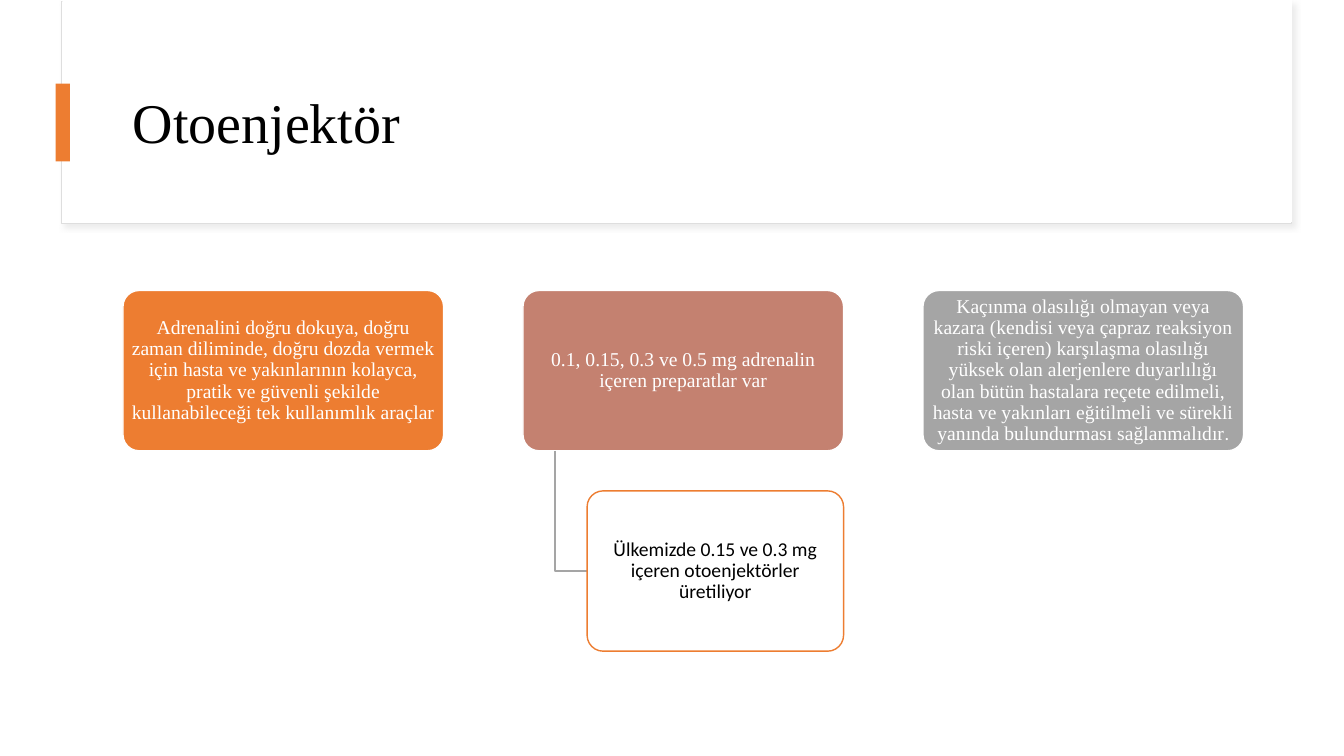
from dataclasses import dataclass

import pptx
import pptx.dml.color
import pptx.enum.shapes
import pptx.enum.text
import pptx.oxml
import pptx.oxml.ns
import pptx.util

Cm, Pt = pptx.util.Cm, pptx.util.Pt
RGB = pptx.dml.color.RGBColor.from_string
SHAPE = pptx.enum.shapes.MSO_SHAPE
ALIGN = pptx.enum.text.PP_ALIGN

COLORS = {
    "white": "FFFFFF", "black": "000000", "orange": "ED7D31", "rose": "C48170",
    "gray": "A5A5A5", "frame": "DEDEDE", "shadow": "D9D9D9",
}
SERIF, SANS = "Times New Roman", "Calibri"

# Diagram grid, in centimetres
LEFT, TOP, PITCH = 3.1, 7.32, 10.08
BOX_W, BOX_H = 8.08, 4.04
CHILD_INDENT = BOX_W / 5
CHILD_TOP = TOP + BOX_H * 1.25


@dataclass
class Run:
    text: str
    font: str = SERIF
    size: float = 14
    color: str = "white"


@dataclass
class Box:
    x: float
    y: float
    w: float
    h: float
    fill: str
    line: str | None = None
    line_pt: float = 1
    runs: tuple[Run, ...] = ()


PANELS = [
    Box(1.55, 0.03, 31.01, 5.61, "white", "frame", 0.75),
    Box(1.57, 0, 30.99, 5.59, "white"),
    Box(1.4, 2.11, 0.36, 1.96, "orange"),
]

TOPICS = [
    ("orange", (Run(
        "Adrenalini doğru dokuya, doğru zaman diliminde, doğru dozda vermek için "
        "hasta ve yakınlarının kolayca, pratik ve güvenli şekilde kullanabileceği "
        "tek kullanımlık araçlar"),)),
    ("rose", (Run("0.1, 0.15, 0.3 ve 0.5 mg adrenalin içeren preparatlar var"),)),
    ("gray", (Run(
        "Kaçınma olasılığı olmayan veya kazara (kendisi veya çapraz reaksiyon riski "
        "içeren) karşılaşma olasılığı yüksek olan alerjenlere duyarlılığı olan bütün "
        "hastalara reçete edilmeli, hasta ve yakınları eğitilmeli ve sürekli yanında "
        "bulundurması sağlanmalıdır"), Run(".", SANS, 13))),
]
CHILD = Run("Ülkemizde 0.15 ve 0.3 mg içeren otoenjektörler üretiliyor", SANS, color="black")


def write_text(s, runs: tuple[Run, ...], align, margins: dict) -> None:
    tf = s.text_frame
    frame = {"word_wrap": True, "vertical_anchor": pptx.enum.text.MSO_ANCHOR.MIDDLE}
    for name, value in (frame | margins).items():
        setattr(tf, name, value)
    p = tf.paragraphs[0]
    p.alignment, p.line_spacing = align, 0.9
    for run in runs:
        r = p.add_run()
        r.text = run.text
        for name, value in {"name": run.font, "size": Pt(run.size)}.items():
            setattr(r.font, name, value)
        r.font.color.rgb = RGB(COLORS[run.color])


def add_box(shapes, box: Box, kind=SHAPE.RECTANGLE):
    s = shapes.add_shape(kind, Cm(box.x), Cm(box.y), Cm(box.w), Cm(box.h))
    s.shadow.inherit = False
    s.fill.solid()
    s.fill.fore_color.rgb = RGB(COLORS[box.fill])
    if box.line:
        s.line.color.rgb = RGB(COLORS[box.line])
        s.line.width = Pt(box.line_pt)
    else:
        s.line.fill.background()
    if kind == SHAPE.ROUNDED_RECTANGLE:
        s.adjustments[0] = 0.1
    if box.runs:
        side, end = Cm(0.08), Cm(0.05)
        write_text(s, box.runs, ALIGN.CENTER, {
            "margin_left": side, "margin_right": side,
            "margin_top": end, "margin_bottom": end})
    return s


def add_soft_shadow(s) -> None:
    effects = s._element.spPr.find(pptx.oxml.ns.qn("a:effectLst"))
    effects.append(pptx.oxml.parse_xml(
        f'<a:outerShdw {pptx.oxml.ns.nsdecls("a")} blurRad="{Pt(4)}" dist="{Pt(3)}" '
        f'dir="2700000" algn="tl" rotWithShape="0"><a:srgbClr val="{COLORS["shadow"]}">'
        '<a:alpha val="50000"/></a:srgbClr></a:outerShdw>'))


def add_elbow(shapes, points: list[tuple[float, float]]) -> None:
    """Draw an open bent line from a topic down to its child box."""
    start, *rest = [(Cm(x), Cm(y)) for x, y in points]
    builder = shapes.build_freeform(*start)
    builder.add_line_segments(rest, close=False)
    s = builder.convert_to_shape()
    s.shadow.inherit = False
    s.fill.background()
    s.line.color.rgb = RGB(COLORS["gray"])
    s.line.width = Pt(1)


def main() -> None:
    prs = pptx.Presentation()
    prs.slide_width, prs.slide_height = Cm(33.87), Cm(19.05)
    shapes = prs.slides.add_slide(prs.slide_layouts[6]).shapes

    frame, *_ = [add_box(shapes, panel) for panel in PANELS]
    add_soft_shadow(frame)
    title = shapes.add_textbox(Cm(3.1), Cm(1.52), Cm(28.24), Cm(3.28))
    write_text(title, (Run("Otoenjektör", size=40, color="black"),), ALIGN.LEFT, {})

    for i, (fill, runs) in enumerate(TOPICS):
        box = Box(LEFT + i * PITCH, TOP, BOX_W, BOX_H, fill, "white", runs=runs)
        add_box(shapes, box, SHAPE.ROUNDED_RECTANGLE)

    parent_x = LEFT + PITCH
    child = Box(parent_x + CHILD_INDENT, CHILD_TOP, BOX_W - CHILD_INDENT, BOX_H,
                "white", "orange", runs=(CHILD,))
    stem_x, child_mid = parent_x + CHILD_INDENT / 2, child.y + child.h / 2
    add_elbow(shapes, [(stem_x, TOP + BOX_H), (stem_x, child_mid), (child.x, child_mid)])
    add_box(shapes, child, SHAPE.ROUNDED_RECTANGLE)

    prs.save("out.pptx")


if __name__ == "__main__":
    main()
